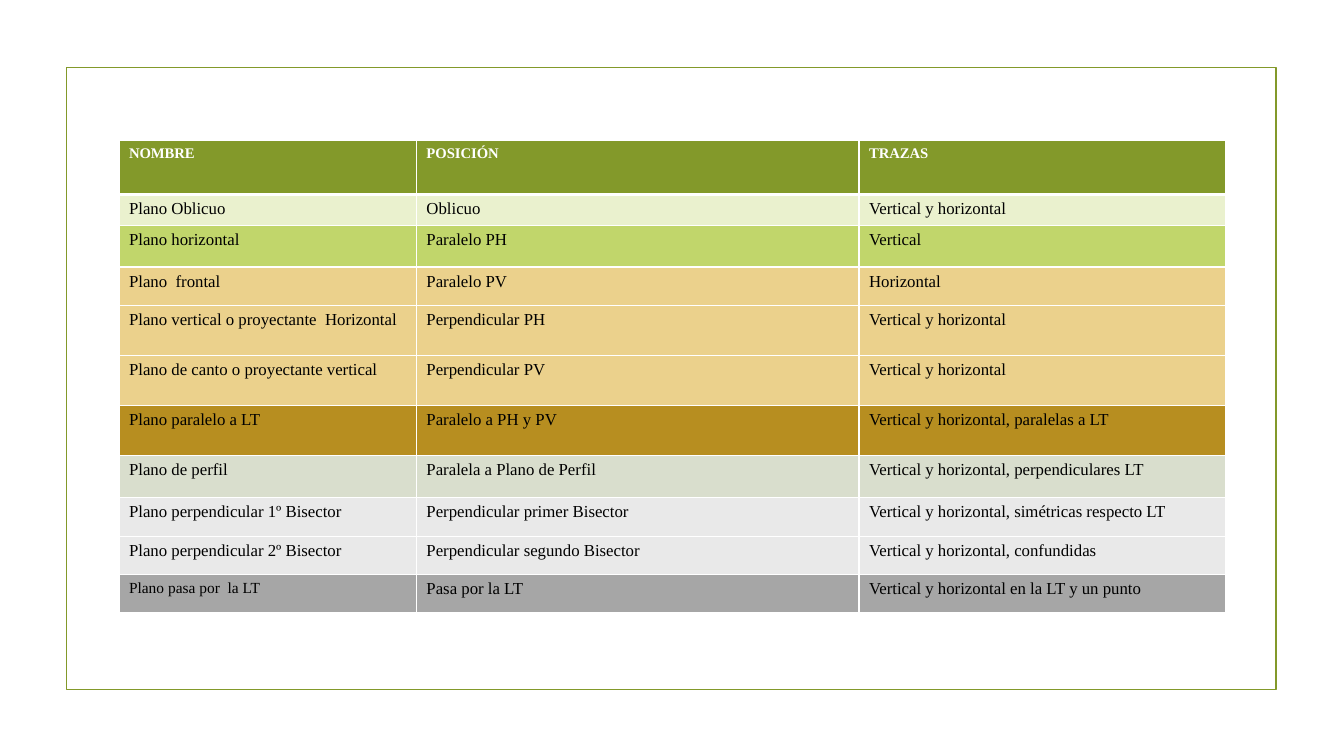
from dataclasses import dataclass

from lxml import etree
from pptx import Presentation
from pptx import util as u
from pptx.dml.color import RGBColor
from pptx.enum import shapes
from pptx.oxml import ns

SLIDE_WIDTH, SLIDE_HEIGHT = u.Inches(13.33), u.Inches(7.5)
FONT = "Times New Roman"
GREEN, WHITE, BLACK = "83992A", "FFFFFF", "000000"
SAND, PALE_GREY = "EBD18C", "E9E9E9"
BOTH = "Vertical y horizontal"
COLUMN_WIDTHS = (2.95, 4.39, 3.64)


@dataclass(frozen=True)
class PlaneRow:
    height: float
    fill: str
    texts: tuple[str, str, str]
    name_size: float = 12
    size: float = 12
    color: str = BLACK
    header: bool = False


ROWS = (
    PlaneRow(0.54, GREEN, ("NOMBRE", "POSICIÓN", "TRAZAS"), 10.5, 10.5, WHITE, True),
    PlaneRow(0.31, "EAF1CE", ("Plano Oblicuo", "Oblicuo", BOTH)),
    PlaneRow(0.41, "C1D66B", ("Plano horizontal", "Paralelo PH", "Vertical")),
    PlaneRow(0.38, SAND, ("Plano  frontal", "Paralelo PV", "Horizontal")),
    PlaneRow(0.5, SAND, ("Plano vertical o proyectante  Horizontal", "Perpendicular PH", BOTH)),
    PlaneRow(0.49, SAND, ("Plano de canto o proyectante vertical", "Perpendicular PV", BOTH)),
    PlaneRow(0.5, "B78E20", ("Plano paralelo a LT", "Paralelo a PH y PV",
                             f"{BOTH}, paralelas a LT")),
    PlaneRow(0.42, "D9DECD", ("Plano de perfil", "Paralela a Plano de Perfil",
                              f"{BOTH}, perpendiculares LT")),
    PlaneRow(0.38, PALE_GREY, ("Plano perpendicular 1º Bisector", "Perpendicular primer Bisector",
                               f"{BOTH}, simétricas respecto LT")),
    PlaneRow(0.38, PALE_GREY, ("Plano perpendicular 2º Bisector", "Perpendicular segundo Bisector",
                               f"{BOTH}, confundidas")),
    PlaneRow(0.38, "A6A6A6", ("Plano pasa por  la LT", "Pasa por la LT",
                              f"{BOTH} en la LT y un punto"), name_size=11),
)


def rgb(value: str) -> RGBColor:
    return RGBColor.from_string(value)


def add_frame(page) -> None:
    frame = page.shapes.add_shape(
        shapes.MSO_SHAPE.RECTANGLE, u.Inches(0.66), u.Inches(0.67), u.Inches(12), u.Inches(6.17))
    frame.shadow.inherit = False
    frame.fill.background()
    frame.line.color.rgb = rgb(GREEN)
    frame.line.width = u.Pt(1.25)


def set_borders(cell, top: float, bottom: float) -> None:
    """Draw white cell borders; widths are in points. Call before filling the cell."""
    properties = cell._tc.get_or_add_tcPr()
    for side, width in (("L", 1), ("R", 1), ("T", top), ("B", bottom)):
        line = etree.SubElement(properties, ns.qn(f"a:ln{side}"), w=str(u.Pt(width)))
        solid = etree.SubElement(line, ns.qn("a:solidFill"))
        etree.SubElement(solid, ns.qn("a:srgbClr"), val=WHITE)


def fill_cell(cell, row: PlaneRow, text: str, size: float) -> None:
    cell.fill.solid()
    cell.fill.fore_color.rgb = rgb(row.fill)
    span = cell.text_frame.paragraphs[0].add_run()
    span.text = text
    span.font.name = FONT
    span.font.size = u.Pt(size)
    span.font.bold = row.header
    span.font.color.rgb = rgb(row.color)


def add_planes_table(page) -> None:
    table = page.shapes.add_table(
        len(ROWS), len(COLUMN_WIDTHS), u.Inches(1.18), u.Inches(1.39),
        u.Inches(sum(COLUMN_WIDTHS)), u.Inches(sum(row.height for row in ROWS))).table
    for column, width in zip(table.columns, COLUMN_WIDTHS):
        column.width = u.Inches(width)
    for index, row in enumerate(ROWS):
        table.rows[index].height = u.Inches(row.height)
        for position, text in enumerate(row.texts):
            cell = table.cell(index, position)
            set_borders(cell, top=3 if index == 1 else 1, bottom=3 if row.header else 1)
            fill_cell(cell, row, text, row.size if position else row.name_size)


def main() -> None:
    deck = Presentation()
    deck.slide_width, deck.slide_height = SLIDE_WIDTH, SLIDE_HEIGHT
    page = deck.slides.add_slide(deck.slide_layouts[6])
    add_frame(page)
    add_planes_table(page)
    deck.save("out.pptx")


if __name__ == "__main__":
    main()
